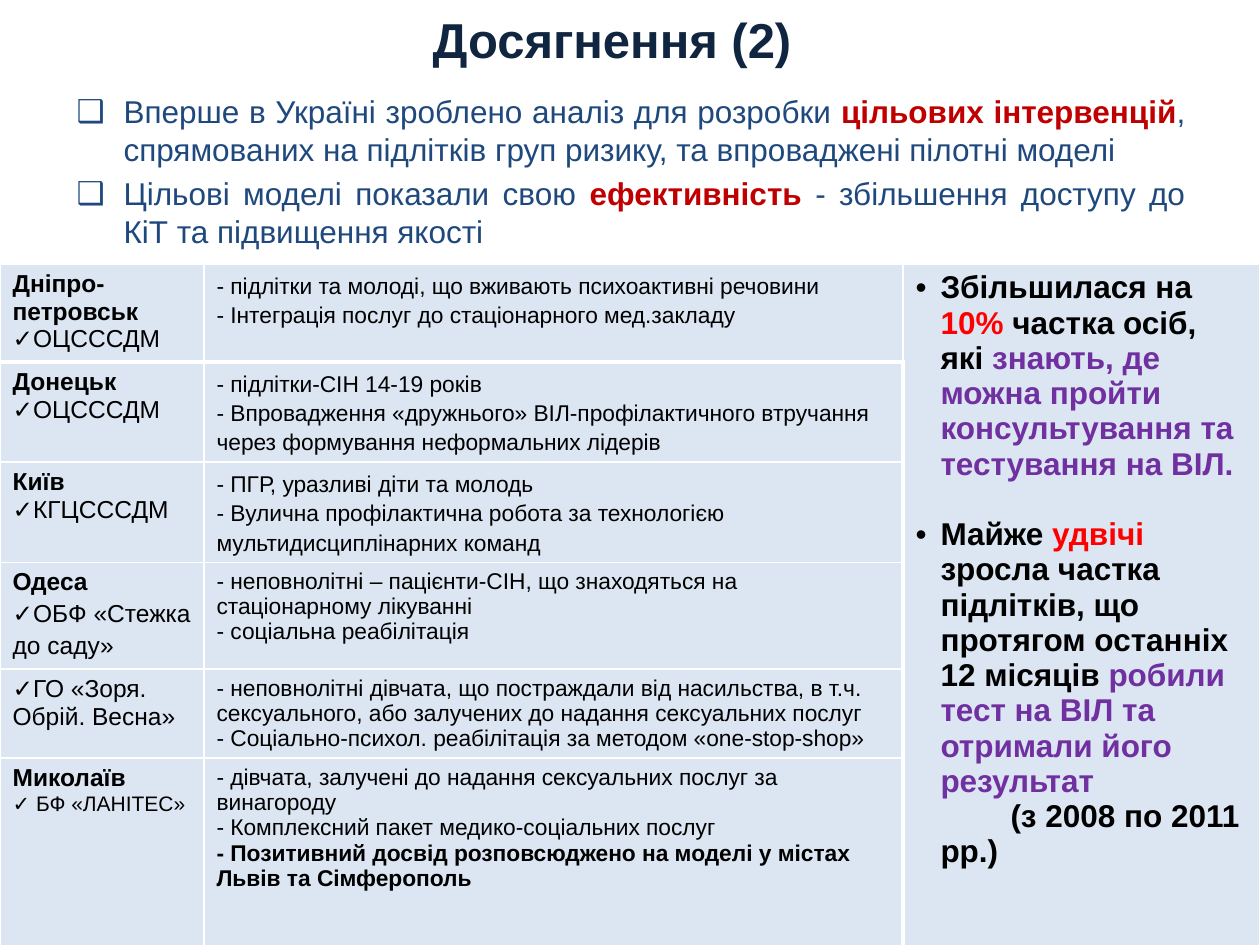
from pptx import Presentation
from pptx.dml.color import RGBColor
from pptx.enum.text import MSO_ANCHOR, PP_ALIGN
from pptx.oxml.ns import qn
from pptx.util import Pt
from lxml.etree import SubElement

EMU_PER_PX = 914400 / 126
FONT = "Arial"
BLACK, WHITE, NAVY, BLUE = "000000", "FFFFFF", "10253F", "1F497D"
CRIMSON, RED, PURPLE, PALE = "C00000", "FF0000", "7030A0", "DCE6F2"

COLUMN_WIDTHS = [204, 699, 357]
ROW_HEIGHTS = [98, 100, 100, 107, 89, 187]

GOALS = [
    [("Вперше в Україні зроблено аналіз для розробки ", BLUE, False),
     ("цільових інтервенцій", CRIMSON, True),
     (", спрямованих на підлітків груп ризику, та впроваджені пілотні моделі", BLUE, False)],
    [("Цільові моделі показали свою ", BLUE, False),
     ("ефективність", CRIMSON, True),
     (" - збільшення доступу до КіТ та підвищення якості", BLUE, False)],
]

REGIONS = [
    ("Дніпро-петровськ", "ОЦСССДМ", {}, 1.15,
     ["- підлітки та молоді, що вживають психоактивні речовини",
      "- Інтеграція послуг до стаціонарного мед.закладу"]),
    ("Донецьк", "ОЦСССДМ", {}, 1.15,
     ["- підлітки-СІН 14-19 років",
      "- Впровадження «дружнього» ВІЛ-профілактичного втручання через формування неформальних лідерів"]),
    ("Київ", "КГЦСССДМ", {}, 1.15,
     ["- ПГР, уразливі діти та молодь",
      "- Вулична профілактична робота за технологією мультидисциплінарних команд"]),
    ("Одеса", "ОБФ «Стежка до саду»", {"line_spacing": 1.15}, None,
     ["- неповнолітні – пацієнти-СІН, що знаходяться на стаціонарному лікуванні",
      "- соціальна реабілітація"]),
    (None, "ГО «Зоря. Обрій. Весна»", {}, None,
     ["- неповнолітні дівчата, що постраждали від насильства, в т.ч. сексуального, "
      "або залучених до надання сексуальних послуг",
      "- Соціально-психол. реабілітація за методом «one-stop-shop»"]),
    ("Миколаїв", " БФ «ЛАНІТЕС»", {"size": 12}, None,
     ["- дівчата, залучені до надання сексуальних послуг за винагороду",
      "- Комплексний пакет медико-соціальних послуг",
      "- Позитивний досвід розповсюджено на моделі у містах Львів та Сімферополь"]),
]

RESULTS = [
    ([("Збільшилася на ", BLACK, True), ("10% ", RED, True),
      ("частка осіб, які ", BLACK, True),
      ("знають, де можна пройти консультування та тестування на ВІЛ.", PURPLE, True)],
     {"bullet": "•", "indent": -25}),
    ([("Майже ", BLACK, True), ("удвічі", RED, True),
      (" зросла частка підлітків, що протягом останніх 12 місяців ", BLACK, True),
      ("робили тест на ВІЛ та отримали його результат", PURPLE, True)],
     {"bullet": "•", "indent": -25, "space_before": 20}),
    ([("(з 2008 по 2011 рр.)", BLACK, True)], {"indent": 70}),
]


def px(length):
    return round(length * EMU_PER_PX)


def rgb(color):
    return RGBColor.from_string(color)


def place(shape, left, top, width, height):
    shape.left, shape.top = px(left), px(top)
    shape.width, shape.height = px(width), px(height)


def add_text(frame, text, size=14, color=BLACK, bold=False, align=PP_ALIGN.LEFT,
             bullet=None, margin=0, indent=0, line_spacing=None, space_before=0):
    paragraph = frame.paragraphs[0]
    if paragraph.runs:
        paragraph = frame.add_paragraph()
    paragraph.alignment = align
    paragraph.space_before = Pt(space_before)
    if line_spacing:
        paragraph.line_spacing = line_spacing
    properties = paragraph._p.get_or_add_pPr()
    properties.set("marL", str(px(margin)))
    properties.set("indent", str(px(indent)))
    if bullet:
        SubElement(properties, qn("a:buFont"), typeface=FONT)
        SubElement(properties, qn("a:buChar"), char=bullet)
    else:
        SubElement(properties, qn("a:buNone"))
    spans = [(text, color, bold)] if isinstance(text, str) else text
    for words, span_color, span_bold in spans:
        run = paragraph.add_run()
        run.text = words
        run.font.name = FONT
        run.font.size = Pt(size)
        run.font.bold = span_bold
        run.font.color.rgb = rgb(span_color)


def format_cell(cell, left=1, right=1, top=1, bottom=1):
    properties = cell._tc.get_or_add_tcPr()
    for side, width in (("L", left), ("R", right), ("T", top), ("B", bottom)):
        line = SubElement(properties, qn(f"a:ln{side}"), w=str(Pt(width)))
        fill = SubElement(line, qn("a:solidFill"))
        SubElement(fill, qn("a:srgbClr"), val=WHITE)
    cell.fill.solid()
    cell.fill.fore_color.rgb = rgb(PALE)


def add_title(slide):
    title = slide.shapes.title
    place(title, 45, 0, 1134, 77)
    title.text_frame.vertical_anchor = MSO_ANCHOR.MIDDLE
    add_text(title.text_frame, "Досягнення (2)", size=28, color=NAVY, bold=True,
             align=PP_ALIGN.CENTER)


def add_goals(slide):
    body = slide.placeholders[1]
    place(body, 64, 86, 1134, 824)
    for goal in GOALS:
        add_text(body.text_frame, goal, size=18, align=PP_ALIGN.JUSTIFY, bullet="❑",
                 margin=47, indent=-47, space_before=3.6)


def add_region_table(slide):
    table = slide.shapes.add_table(len(ROW_HEIGHTS), len(COLUMN_WIDTHS), 0, px(264),
                                   px(sum(COLUMN_WIDTHS)), px(sum(ROW_HEIGHTS))).table
    table.first_row = table.horz_banding = False
    for column, width in zip(table.columns, COLUMN_WIDTHS):
        column.width = px(width)
    for row, height in zip(table.rows, ROW_HEIGHTS):
        row.height = px(height)
    table.cell(0, 2).merge(table.cell(len(ROW_HEIGHTS) - 1, 2))

    for index, (city, center, center_format, spacing, services) in enumerate(REGIONS):
        top = 3 if index == 1 else 1
        bottom = 3 if index == 0 else 1
        city_cell, service_cell, result_cell = (table.cell(index, column) for column in range(3))
        format_cell(city_cell, top=top, bottom=bottom)
        format_cell(service_cell, right=3 if index else 1, top=top, bottom=bottom)
        format_cell(result_cell, left=3 if index else 1)
        if city:
            add_text(city_cell.text_frame, city, bold=True)
        add_text(city_cell.text_frame, center, bullet="✓", **center_format)
        for service in services:
            add_text(service_cell.text_frame, service, size=13, line_spacing=spacing,
                     bold=service.startswith("- Позитивний"))

    for result, result_format in RESULTS:
        add_text(table.cell(0, 2).text_frame, result, size=18, margin=25, **result_format)


def main():
    presentation = Presentation()
    presentation.slide_width, presentation.slide_height = px(1260), px(945)
    slide = presentation.slides.add_slide(presentation.slide_layouts[1])
    add_title(slide)
    add_goals(slide)
    add_region_table(slide)
    presentation.save("out.pptx")


if __name__ == "__main__":
    main()
